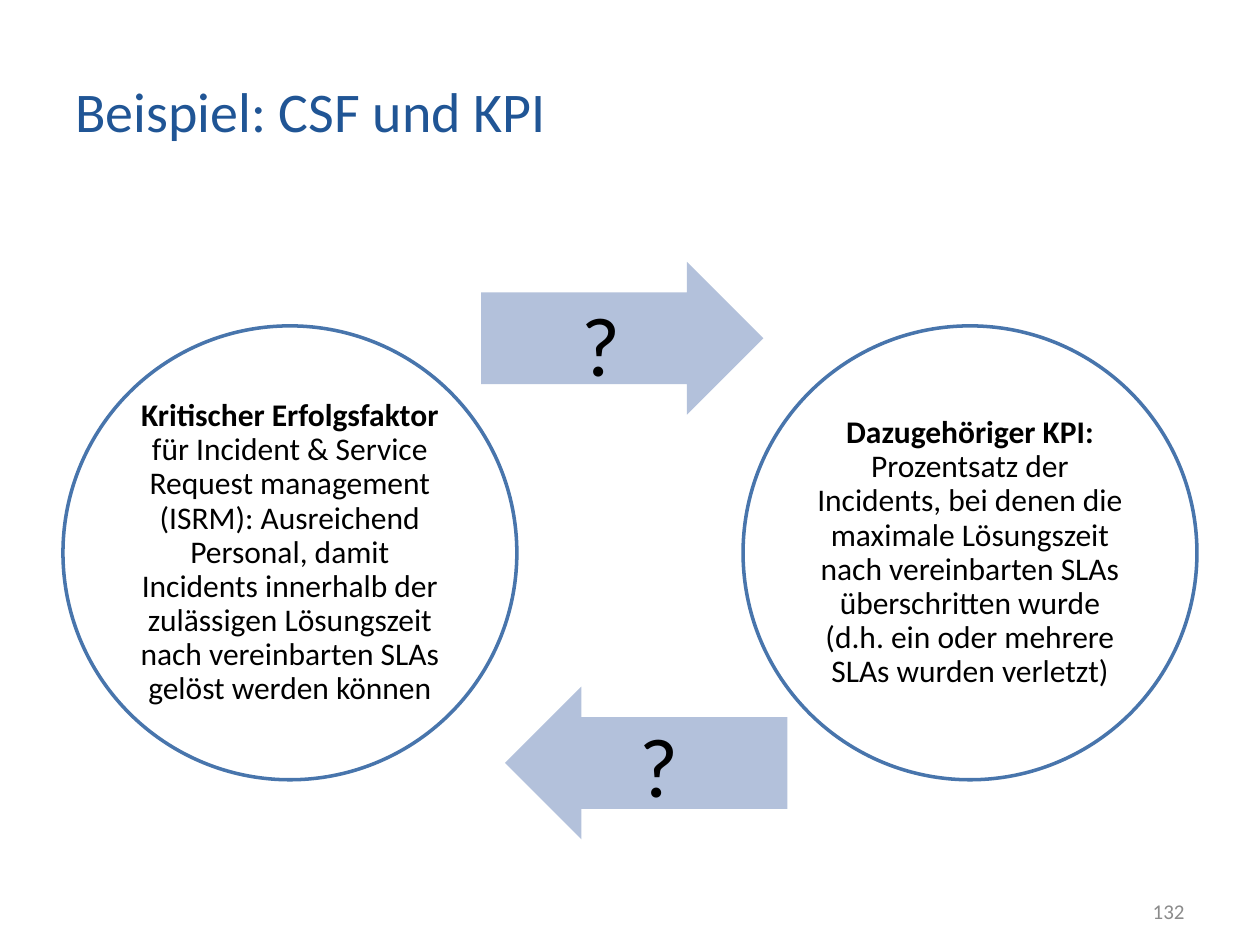
from dataclasses import dataclass

from pptx import Presentation
from pptx.dml.color import RGBColor
from pptx.enum.shapes import MSO_SHAPE
from pptx.enum.text import MSO_ANCHOR, PP_ALIGN
from pptx.util import Cm, Pt


@dataclass(frozen=True)
class Theme:
    font: str = "Calibri"
    title: RGBColor = RGBColor(0x20, 0x55, 0x95)
    outline: RGBColor = RGBColor(0x48, 0x75, 0xAC)
    arrow: RGBColor = RGBColor(0xB3, 0xC1, 0xDB)
    paper: RGBColor = RGBColor(0xFF, 0xFF, 0xFF)
    ink: RGBColor = RGBColor(0, 0, 0)
    muted: RGBColor = RGBColor(0x8B, 0x8B, 0x8B)
    title_size: int = 32
    body_size: int = 18
    mark_size: int = 48
    number_size: int = 12


def apply(target, values):
    for name, value in values.items():
        setattr(target, name, value)


class SlideBuilder:
    """Draws styled elements on the current slide."""

    def __init__(self, s, theme):
        self.s = s
        self.theme = theme

    def fill_text(self, tf, runs, size, color, frame, para):
        apply(tf, frame)
        p = tf.paragraphs[0]
        apply(p, para)
        for text, bold in runs:
            r = p.add_run()
            r.text = text
            apply(r.font, {"name": self.theme.font, "size": Pt(size), "bold": bold})
            r.font.color.rgb = color

    def text(self, box, text, size, color, wrap=True,
             anchor=MSO_ANCHOR.MIDDLE, align=PP_ALIGN.LEFT):
        sp = self.s.shapes.add_textbox(*map(Cm, box))
        self.fill_text(sp.text_frame, [(text, False)], size, color,
                       {"word_wrap": wrap, "vertical_anchor": anchor},
                       {"alignment": align})

    def shape(self, kind, box, fill):
        sp = self.s.shapes.add_shape(kind, *map(Cm, box))
        sp.shadow.inherit = False
        sp.fill.solid()
        sp.fill.fore_color.rgb = fill
        return sp

    def circle(self, left, top, diameter, heading, body):
        sp = self.shape(MSO_SHAPE.OVAL, (left, top, diameter, diameter), self.theme.paper)
        sp.line.color.rgb = self.theme.outline
        sp.line.width = Pt(2)
        sides = ("left", "top", "right", "bottom")
        frame = {f"margin_{side}": Cm(0.08) for side in sides}
        frame.update(word_wrap=True, vertical_anchor=MSO_ANCHOR.MIDDLE)
        self.fill_text(sp.text_frame, [(heading, True), (body, False)],
                       self.theme.body_size, self.theme.ink, frame,
                       {"alignment": PP_ALIGN.CENTER, "line_spacing": 0.9})

    def arrow(self, left, top, rotation):
        sp = self.shape(MSO_SHAPE.RIGHT_ARROW, (left, top, 5.69, 3.08), self.theme.arrow)
        sp.adjustments[0], sp.adjustments[1] = 0.6, 0.5
        sp.rotation = rotation
        sp.line.fill.background()

    def mark(self, left, top):
        self.text((left, top, 1.3, 2.29), "?", self.theme.mark_size, self.theme.ink,
                  wrap=False, anchor=MSO_ANCHOR.TOP)


def main():
    prs = Presentation()
    prs.slide_width, prs.slide_height = Cm(25.4), Cm(19.05)
    theme = Theme()
    slide = SlideBuilder(prs.slides.add_slide(prs.slide_layouts[6]), theme)

    slide.text((1.27, 0.76, 20.42, 2.92), "Beispiel: CSF und KPI",
               theme.title_size, theme.title)
    slide.circle(1.27, 6.57, 9.15, "Kritischer Erfolgsfaktor ",
                 "für Incident & Service Request management (ISRM): Ausreichend Personal, "
                 "damit Incidents innerhalb der zulässigen Lösungszeit nach vereinbarten "
                 "SLAs gelöst werden können")
    slide.circle(14.98, 6.57, 9.15, "Dazugehöriger KPI:",
                 " Prozentsatz der Incidents, bei denen die maximale Lösungszeit nach "
                 "vereinbarten SLAs überschritten wurde (d.h. ein oder mehrere SLAs "
                 "wurden verletzt)")
    slide.arrow(9.7, 5.28, 0)
    slide.arrow(10.18, 13.84, 180)
    slide.text((18.21, 17.86, 5.92, 1.02), "132", theme.number_size, theme.muted,
               align=PP_ALIGN.RIGHT)
    slide.mark(11.48, 5.77)
    slide.mark(12.65, 14.25)
    prs.save("out.pptx")


if __name__ == "__main__":
    main()
